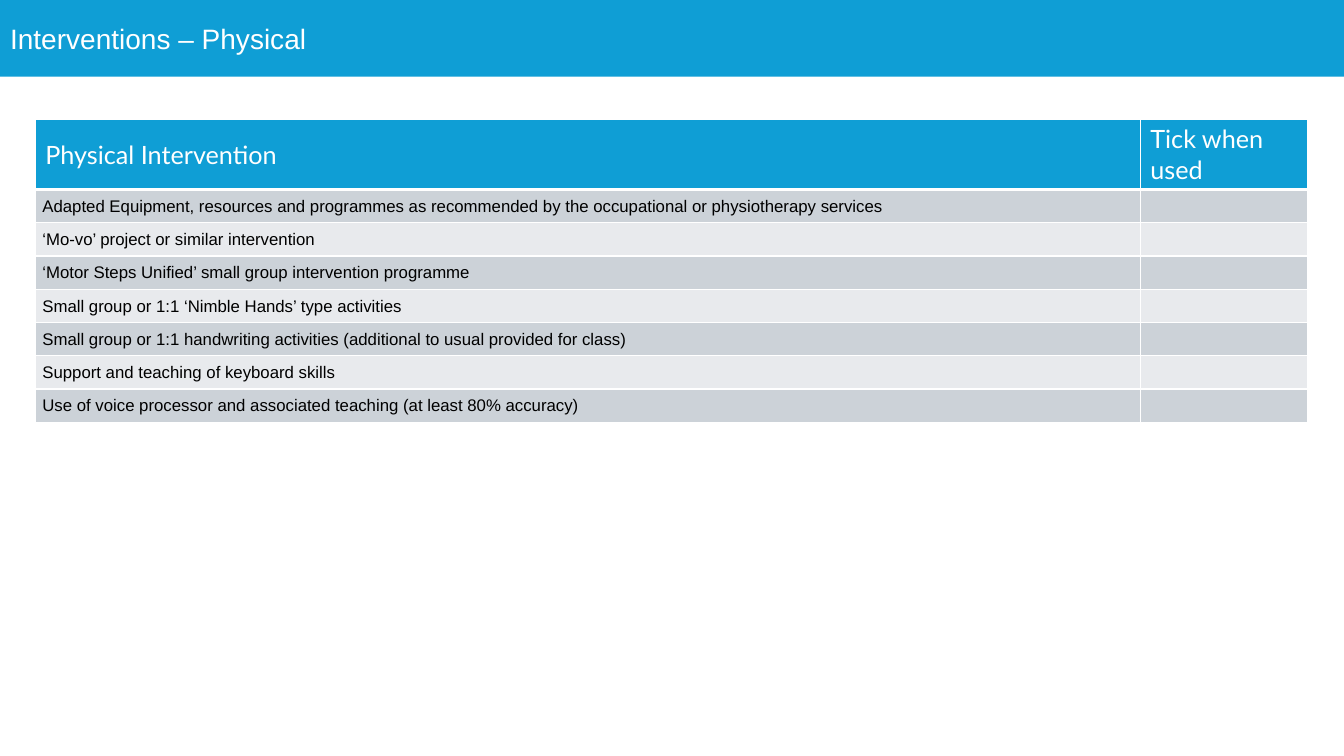
import pptx
import pptx.util
import pptx.dml.color
import pptx.enum.text
import pptx.oxml.ns
import lxml.etree

Inch = pptx.util.Inches
Pt = pptx.util.Pt
mid = pptx.enum.text.MSO_ANCHOR.MIDDLE
hues = {"blue": "0F9ED5", "dark": "CCD2D8", "light": "E8EAED", "white": "FFFFFF", "black": "000000"}


def hue(name):
    return pptx.dml.color.RGBColor.from_string(hues[name])


def write(frame, text, font="Arial", size=12, tint="black", lead=None, dent=0):
    para = frame.paragraphs[0]
    para.alignment = pptx.enum.text.PP_ALIGN.LEFT
    if lead:
        para.line_spacing = Pt(lead)
    if dent:
        para._p.get_or_add_pPr().set("marL", str(Inch(dent)))
    run = para.add_run()
    run.text = text
    run.font.name = font
    run.font.size = Pt(size)
    run.font.bold = False
    run.font.color.rgb = hue(tint)


deck = pptx.Presentation()
deck.slide_width, deck.slide_height = Inch(13.33), Inch(7.5)
slide = deck.slides.add_slide(deck.slide_layouts[5])

title = slide.shapes.title
title.left, title.top = 0, 0
title.width, title.height = deck.slide_width, Inch(0.76)
title.fill.solid()
title.fill.fore_color.rgb = hue("blue")
title.text_frame.vertical_anchor = mid
write(title.text_frame, "Interventions – Physical", size=20, tint="white")

heads = ["Physical Intervention", "Tick when used"]
items = [
    "Adapted Equipment, resources and programmes as recommended by the occupational or physiotherapy services",
    "‘Mo-vo’ project or similar intervention",
    "‘Motor Steps Unified’ small group intervention programme",
    "Small group or 1:1 ‘Nimble Hands’ type activities",
    "Small group or 1:1 handwriting activities (additional to usual provided for class)",
    "Support and teaching of keyboard skills",
    "Use of voice processor and associated teaching (at least 80% accuracy)",
]
rows = [heads] + [[item, ""] for item in items]
wides = [10.96, 1.66]
head_high, row_high = 0.7, 0.33
high = head_high + row_high * len(items)
table = slide.shapes.add_table(
    len(rows), len(wides), Inch(0.35), Inch(1.18), Inch(sum(wides)), Inch(high)).table
for col, wide in zip(table.columns, wides):
    col.width = Inch(wide)

for r, row in enumerate(rows):
    top = r == 0
    table.rows[r].height = Inch(head_high if top else row_high)
    for c, text in enumerate(row):
        cell = table.cell(r, c)
        cell.vertical_anchor = mid
        cell.fill.solid()
        cell.fill.fore_color.rgb = hue("blue" if top else "dark" if r % 2 else "light")
        if top:
            write(cell.text_frame, text, font="Lato", size=18, tint="white")
        else:
            cell.margin_left = cell.margin_right = cell.margin_top = cell.margin_bottom = 0
            if text:
                write(cell.text_frame, text, lead=13.7, dent=0.07)
        props = cell._tc.get_or_add_tcPr()
        for i, side in enumerate(["lnL", "lnR", "lnT", "lnB"]):
            line = lxml.etree.Element(pptx.oxml.ns.qn("a:" + side))
            line.set("w", str(Pt(3 if top and side == "lnB" else 1)))
            fill = lxml.etree.SubElement(line, pptx.oxml.ns.qn("a:solidFill"))
            lxml.etree.SubElement(fill, pptx.oxml.ns.qn("a:srgbClr")).set("val", hues["white"])
            props.insert(i, line)

deck.save("out.pptx")
